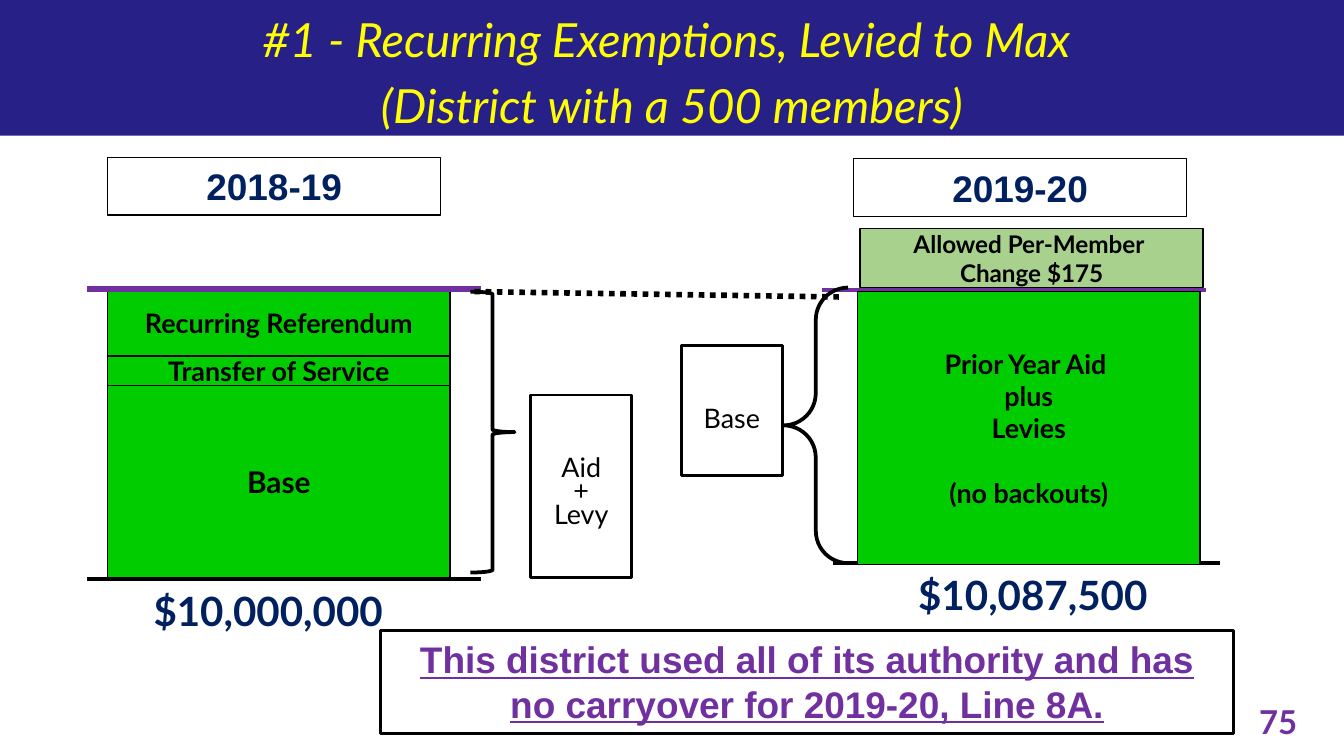
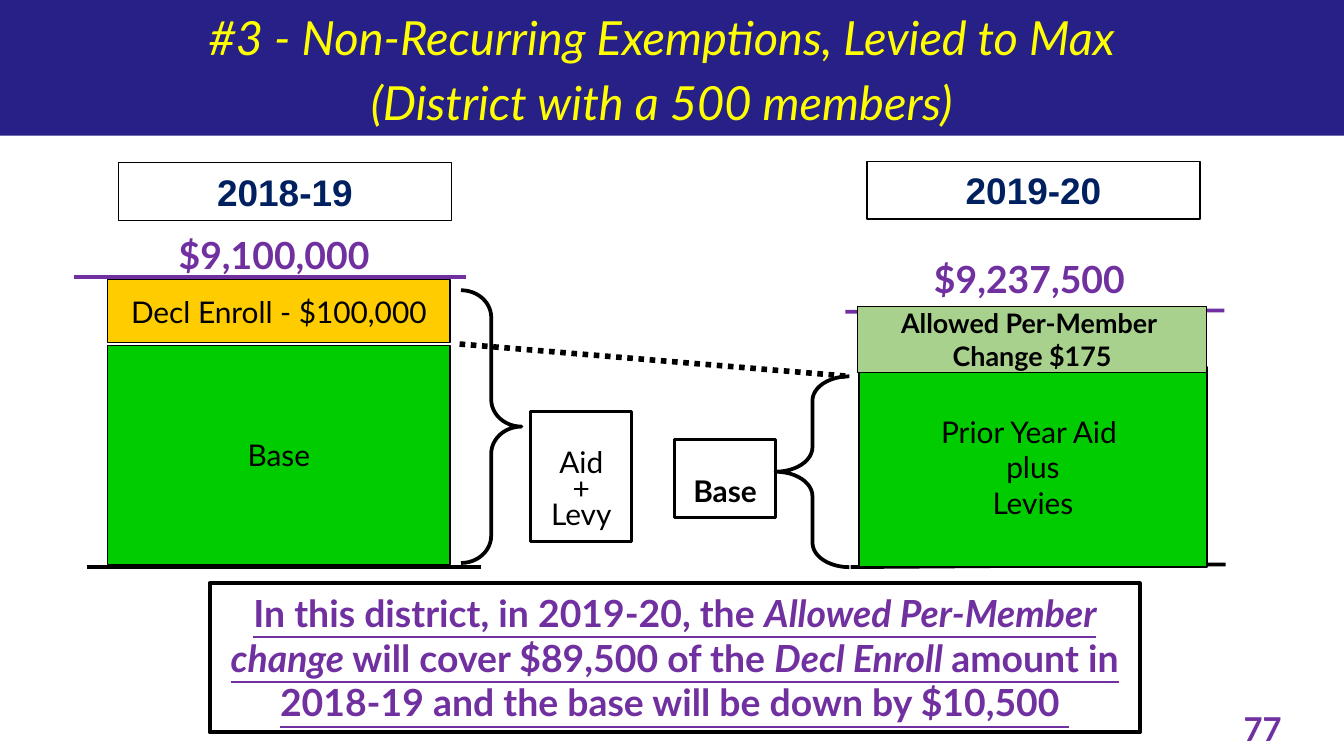
from lxml import etree
from pptx import Presentation
from pptx.dml.color import RGBColor
from pptx.enum.dml import MSO_LINE
from pptx.enum.shapes import MSO_CONNECTOR, MSO_SHAPE
from pptx.enum.text import MSO_ANCHOR, MSO_AUTO_SIZE, PP_ALIGN
from pptx.oxml.ns import qn
from pptx.util import Inches, Pt

RECT, LEFT, RIGHT = MSO_SHAPE.RECTANGLE, MSO_SHAPE.LEFT_BRACE, MSO_SHAPE.RIGHT_BRACE
STRAIGHT, DOTS = MSO_CONNECTOR.STRAIGHT, MSO_LINE.ROUND_DOT
TOP, MIDDLE = MSO_ANCHOR.TOP, MSO_ANCHOR.MIDDLE
CENTER, FIXED = PP_ALIGN.CENTER, MSO_AUTO_SIZE.NONE

BAND, YELLOW, NAVY, PURPLE = "262087", "FFFF00", "002060", "7030A0"
GREEN, LIME, GOLD, BLACK = "00CC00", "A9D18E", "FFCC00", "000000"
LATO, ARIAL = "Lato", "Arial"
ALLOWED = "Allowed Per-Member \nChange $175"
PRIOR = "Prior Year Aid \nplus\nLevies"


def rgb(code):
    """Turn a hex string into a colour."""
    return RGBColor.from_string(code)


def write(shape, text, size, hue=BLACK, face=LATO, bold=False, italic=False,
          under=False, anchor=TOP, gap=0, pitch=None):
    """Fill a shape with centred lines; a list holds (text, italic) runs."""
    frame = shape.text_frame
    frame.word_wrap, frame.auto_size = True, FIXED
    frame.vertical_anchor = anchor
    rows = [text]
    if isinstance(text, str):
        rows = [[(row, italic)] for row in text.split("\n")]
    for i, row in enumerate(rows):
        para = frame.add_paragraph() if i else frame.paragraphs[0]
        para.alignment = CENTER
        para.space_before = Pt(gap if i else 0)
        if pitch:
            para.line_spacing = Pt(pitch)
        for words, slant in row:
            run = para.add_run()
            run.text = words
            font = run.font
            font.size, font.name, font.color.rgb = Pt(size), face, rgb(hue)
            font.bold, font.italic, font.underline = bold, slant, under
    return frame


def shape(s, x, y, w, h, fill=None, line=0.75, kind=RECT):
    """Add a preset shape with a black outline."""
    item = s.shapes.add_shape(kind, Inches(x), Inches(y), Inches(w), Inches(h))
    item.shadow.inherit = False
    if fill:
        item.fill.solid()
        item.fill.fore_color.rgb = rgb(fill)
    else:
        item.fill.background()
    if line:
        item.line.color.rgb, item.line.width = rgb(BLACK), Pt(line)
    else:
        item.line.fill.background()
    return item


def rule(s, x1, y1, x2, y2, hue=BLACK, width=2, dash=None):
    """Draw a straight line."""
    item = s.shapes.add_connector(
        STRAIGHT, Inches(x1), Inches(y1), Inches(x2), Inches(y2))
    item.line.color.rgb, item.line.width = rgb(hue), Pt(width)
    if dash:
        item.line.dash_style = dash
    etree.SubElement(item.element.spPr, qn("a:effectLst"))


def label(s, x, y, w, h, text, size, hue):
    """Add a bold line of text with no frame."""
    box = s.shapes.add_textbox(Inches(x), Inches(y), Inches(w), Inches(h))
    write(box, text, size, hue, bold=True)


def year(s, x, y, text):
    """Add the framed year above a column."""
    write(shape(s, x, y, 2.48, 0.43), text, 19.8, NAVY, ARIAL, bold=True)


def stack(s, x, y, w, bars, gap=0):
    """Pile bars of (height, fill, text, size, bold); return the last text."""
    for h, fill, text, size, bold in bars:
        bar = shape(s, x, y, w, h, fill)
        frame = write(bar, text, size, bold=bold, anchor=MIDDLE)
        frame.margin_top = frame.margin_bottom = 0
        y += h + gap
    return frame


def brace(s, x, y, w, h, kind, bend):
    """Add a brace with the given bend."""
    item = shape(s, x, y, w, h, line=2, kind=kind)
    item.adjustments[0], item.adjustments[1] = bend, 0.5


def tag(s, x, y, h, text, size, drop, bold=False):
    """Add the small box beside a brace, its text lowered by drop."""
    pitch = size * 0.88 if "\n" in text else None
    frame = write(shape(s, x, y, 0.75, h, line=1.5), text, size,
                  bold=bold, anchor=MIDDLE, pitch=pitch)
    frame.margin_top, frame.margin_bottom = Inches(2 * drop), 0


def note(s, x, y, w, h, text, size, face, line):
    """Add the framed conclusion."""
    write(shape(s, x, y, w, h, line=line), text, size, PURPLE, face,
          bold=True, under=True)


def band(deck, s):
    """Put the top band on the layout that all slides share."""
    item = shape(s, -0.01, 0, 10.01, 1.01, BAND, line=0)
    item.element.nvSpPr.cNvPr.set("id", "99")
    deck.slide_layouts[5].shapes.element.insert(2, item.element)


def head(s, x, y, w, text):
    """Place the title over the band."""
    title = s.shapes.title
    title.left, title.top = Inches(x), Inches(y)
    title.width, title.height = Inches(w), Inches(1.03)
    write(title, text, 25.2, YELLOW, italic=True, gap=5)


def recur(s):
    """Build the slide on recurring exemptions."""
    head(s, 0, 0.03, 10, "#1 - Recurring Exemptions, Levied to Max \n"
         "(District with a 500 members)")
    year(s, 0.8, 1.17, "2018-19")
    stack(s, 0.8, 2.16, 2.55, [
        (0.49, GREEN, "Recurring Referendum", 14.4, True),
        (0.22, GREEN, "Transfer of Service", 14.4, True),
        (1.43, GREEN, "Base", 16, True)])
    rule(s, 3.58, 4.31, 0.65, 4.31)
    rule(s, 3.58, 2.15, 0.65, 2.15, PURPLE, 3)
    label(s, 0.72, 4.31, 2.55, 0.46, "$10,000,000", 21.6, NAVY)
    brace(s, 3.5, 2.17, 0.33, 2.09, RIGHT, 0.06)
    tag(s, 3.95, 2.94, 1.36, "Aid\n+\nLevy", 14.4, 0.06)

    year(s, 6.35, 1.18, "2019-20")
    rule(s, 9.08, 4.19, 6.2, 4.19)
    rule(s, 8.97, 2.16, 6.12, 2.16, PURPLE)
    stack(s, 6.4, 1.7, 2.55, [(0.44, LIME, ALLOWED, 13, True)])
    frame = stack(s, 6.38, 2.17, 2.55, [
        (2.03, GREEN, PRIOR + "\n(no backouts)", 14.4, True)])
    frame.paragraphs[-1].space_before = Pt(17.3)
    label(s, 6.2, 4.19, 2.97, 0.46, "$10,087,500", 21.6, NAVY)
    brace(s, 5.83, 2.14, 0.48, 2.05, LEFT, 0.5)
    tag(s, 5.07, 2.57, 0.97, "Base", 14.4, 0.05)
    rule(s, 3.53, 2.17, 6.26, 2.21, width=3, dash=DOTS)
    note(s, 2.83, 4.69, 6.35, 0.77,
         "This district used all of its authority and has "
         "no carryover for 2019-20, Line 8A.", 19.8, ARIAL, 1.5)
    label(s, 9.14, 5.17, 0.74, 0.32, "75", 17.6, PURPLE)


def once(s):
    """Build the slide on non-recurring exemptions."""
    head(s, -0.03, 0.01, 9.99, "#3 - Non-Recurring Exemptions, Levied to Max \n"
         "(District with a 500 members) ")
    year(s, 0.88, 1.21, "2018-19")
    rule(s, 3.58, 4.22, 0.65, 4.22)
    stack(s, 0.8, 2.08, 2.55, [
        (0.47, GOLD, "Decl Enroll - $100,000", 16, False),
        (1.63, GREEN, "Base", 16, False)], 0.02)
    rule(s, 3.47, 2.06, 0.55, 2.06, PURPLE, 2.25)
    label(s, 0.8, 1.68, 2.48, 0.44, "$9,100,000", 20, PURPLE)
    brace(s, 3.43, 2.16, 0.45, 2.03, RIGHT, 0.45)
    tag(s, 3.95, 3.06, 0.97, "Aid\n+\nLevy", 16, 0.12)

    year(s, 6.45, 1.2, "2019-20")
    rule(s, 9.12, 4.2, 6.33, 4.22)
    rule(s, 9.11, 2.31, 6.29, 2.32, PURPLE)
    stack(s, 6.39, 2.73, 2.59, [(1.49, GREEN, PRIOR, 16, False)])
    stack(s, 6.38, 2.28, 2.6, [(0.49, LIME, ALLOWED, 14.4, True)])
    label(s, 6.42, 1.86, 2.48, 0.44, "$9,237,500", 20, PURPLE)
    brace(s, 5.77, 2.8, 0.55, 1.42, LEFT, 0.33)
    tag(s, 5.02, 3.27, 0.58, "Base", 16, 0.09, True)
    rule(s, 3.42, 2.56, 6.32, 2.8, width=3, dash=DOTS)
    note(s, 1.56, 4.34, 6.92, 1.11, [
        ("In this district, in 2019-20, the ", False),
        ("Allowed Per-Member change ", True),
        ("will cover $89,500 of the ", False),
        ("Decl Enroll ", True),
        ("amount in 2018-19 and the base will be down by $10,500 ", False)],
        20, LATO, 2.25)
    label(s, 8.8, 5.22, 1.19, 0.28, "77", 17.6, PURPLE)


def main():
    """Build and save the deck."""
    deck = Presentation()
    deck.slide_width, deck.slide_height = Inches(10), Inches(10 * 9 / 16)
    for i, build in enumerate((recur, once)):
        s = deck.slides.add_slide(deck.slide_layouts[5])
        if not i:
            band(deck, s)
        build(s)
    deck.save("out.pptx")


if __name__ == "__main__":
    main()
